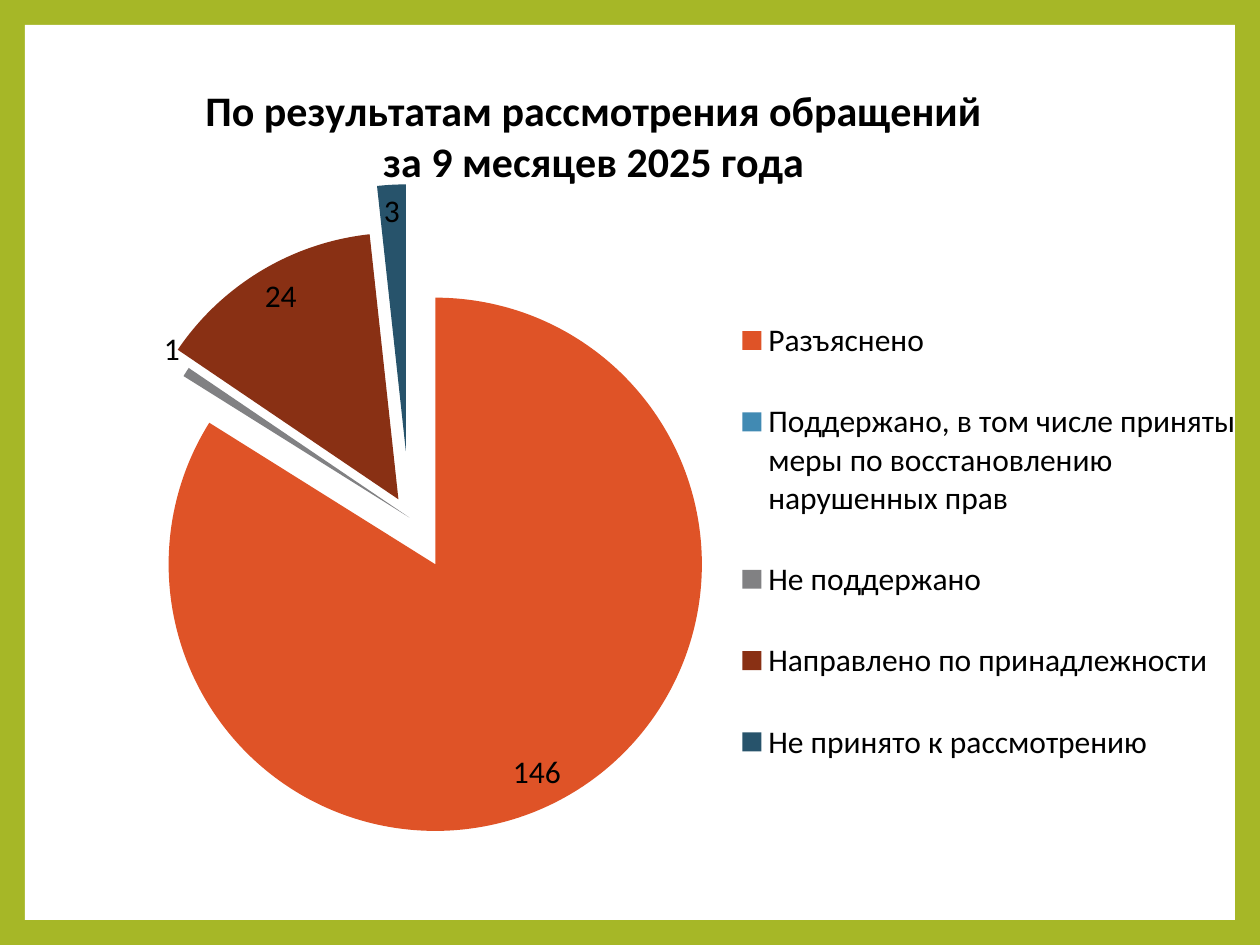
from lxml.etree import SubElement
from pptx import Presentation
from pptx.chart.data import CategoryChartData
from pptx.dml.color import RGBColor
from pptx.enum.chart import XL_CHART_TYPE as Chart, XL_LABEL_POSITION as Pos, XL_LEGEND_POSITION as Side
from pptx.enum.shapes import MSO_SHAPE as Shape
from pptx.enum.text import PP_ALIGN as Align
from pptx.oxml import parse_xml
from pptx.oxml.ns import nsdecls, qn
from pptx.util import Pt

PX = 914400 // 126
W, H = 1260, 945
MARGIN = 25
CHART_TOP = 6
FONT = "Calibri"

TITLE = ["По результатам рассмотрения обращений", "за 9 месяцев 2025 года"]
SERIES_EXPLOSION = 25
# category, value, colour, own explosion in % (None: as the series)
RESULTS = [
    ("Разъяснено", 146, "DF5327", 20),
    ("Поддержано, в том числе приняты меры по восстановлению нарушенных прав", 0, "418AB3", None),
    ("Не поддержано", 1, "818183", 0),
    ("Направлено по принадлежности", 24, "893014", 8),
    ("Не принято к рассмотрению", 3, "27536B", None),
]
OUTSIDE_LABEL = 2


def rgb(value):
    return RGBColor.from_string(value)


def fill(obj, color):
    obj.fill.solid()
    obj.fill.fore_color.rgb = rgb(color)


def set_font(font, size=18, bold=False, color="000000"):
    font.name, font.size, font.bold = FONT, Pt(size), bold
    font.color.rgb = rgb(color)


def add_text(tf, lines, align=Align.CENTER, **style):
    for i, line in enumerate(lines):
        p = tf.add_paragraph() if i else tf.paragraphs[0]
        p.alignment = align
        r = p.add_run()
        r.text = line
        set_font(r.font, **style)


def make_layout(inner=False, **fractions):
    """Return a manual chart layout; fractions are x, y, w, h of the chart."""
    layout = parse_xml(f"<c:layout {nsdecls('c')}><c:manualLayout/></c:layout>")
    manual = layout[0]
    if inner:
        SubElement(manual, qn("c:layoutTarget")).set("val", "inner")
    for key in "xy":
        SubElement(manual, qn(f"c:{key}Mode")).set("val", "edge")
    for key, value in fractions.items():
        SubElement(manual, qn(f"c:{key}")).set("val", str(value))
    return layout


def place(parent, before, layout):
    for old in parent.findall(qn("c:layout")):
        parent.remove(old)
    parent.find(qn(before)).addprevious(layout)


def explosion(percent):
    return parse_xml(f'<c:explosion {nsdecls("c")} val="{percent}"/>')


prs = Presentation()
prs.slide_width, prs.slide_height = W * PX, H * PX
s = prs.slides.add_slide(prs.slide_layouts[6])
fill(s.background, "A6B727")

panel = s.shapes.add_shape(Shape.RECTANGLE, MARGIN * PX, MARGIN * PX,
                           (W - 2 * MARGIN) * PX, (H - 2 * MARGIN) * PX)
panel.shadow.inherit = False
fill(panel, "FFFFFF")
panel.line.fill.background()

data = CategoryChartData()
data.categories = [row[0] for row in RESULTS]
data.add_series("Обращения", [row[1] for row in RESULTS])
chart = s.shapes.add_chart(Chart.PIE, 0, CHART_TOP * PX, W * PX, (H - CHART_TOP) * PX, data).chart
set_font(chart.font)

chart.has_title = True
title = chart.chart_title
add_text(title.text_frame, TITLE, size=24, bold=True)
title_xml = title._element
place(title_xml, "c:overlay", make_layout(x=0.16, y=0.08))
title_xml.find(qn("c:overlay")).set("val", "1")

chart.has_legend = True
legend = chart.legend
legend.position = Side.RIGHT
legend.include_in_layout = False
set_font(legend.font)
place(legend._element, "c:overlay", make_layout(x=0.58, y=0.29, w=0.41, h=0.56))

plot = chart.plots[0]
plot.vary_by_categories = True
place(plot._element.getparent(), "c:pieChart",
      make_layout(inner=True, x=0.06, y=0.19, w=0.53, h=0.71))

series = plot.series[0]
for i, (_, _, color, percent) in enumerate(RESULTS):
    fill(series.points[i].format, color)
    if percent is not None:
        point_xml = series._element.findall(qn("c:dPt"))[i]
        point_xml.find(qn("c:spPr")).addprevious(explosion(percent))
series._element.find(qn("c:dPt")).addprevious(explosion(SERIES_EXPLOSION))

labels = series.data_labels
labels.show_value = True
labels.number_format, labels.number_format_is_linked = "0;;", False  # hides zero
labels.position = Pos.INSIDE_END
set_font(labels.font)
outside = series.points[OUTSIDE_LABEL].data_label
set_font(outside.font)
outside.position = Pos.OUTSIDE_END

prs.save("out.pptx")
